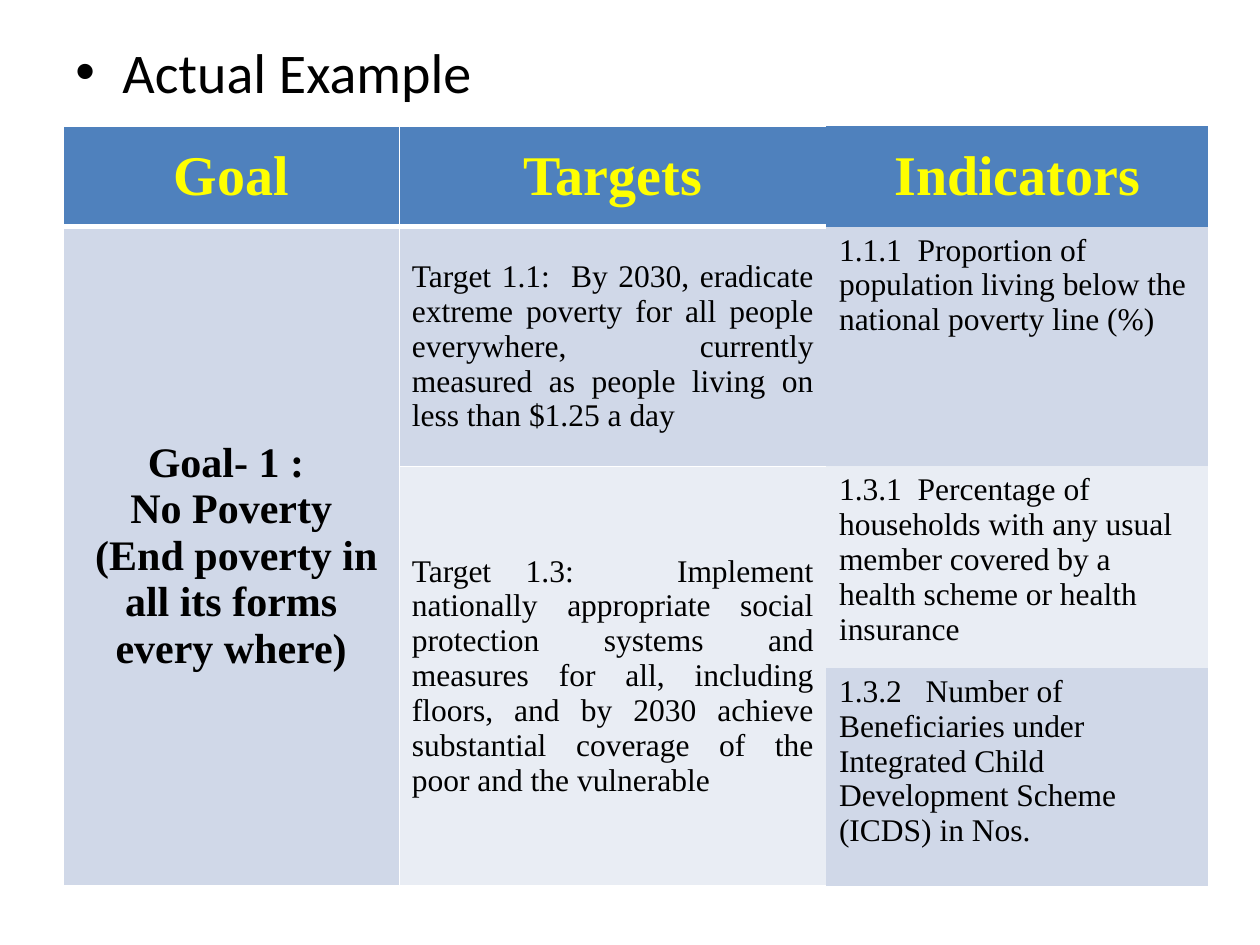
from dataclasses import dataclass

from lxml.etree import SubElement
from pptx import Presentation
from pptx.dml.color import RGBColor as Rgb
from pptx.enum.text import MSO_ANCHOR as Anchor, PP_ALIGN as Align
from pptx.oxml.ns import qn
from pptx.util import Cm, Pt


@dataclass(frozen=True)
class Theme:
    heading_font: str = "Calibri"
    table_font: str = "Times New Roman"
    large: int = 32
    medium: int = 24
    small: int = 18
    black: str = "000000"
    yellow: str = "FFFF00"
    white: str = "FFFFFF"
    header: str = "4F81BD"
    band: str = "D0D8E8"
    light_band: str = "E9EDF4"


THEME = Theme()
HEADING = "Actual Example"
COLUMN_WIDTHS = (6.78, 8.61, 7.7)
ROW_HEIGHTS = (2.03, 4.83, 3.99, 4.39)

STYLES = {
    "header": (THEME.large, True, THEME.yellow, Align.CENTER, Anchor.MIDDLE),
    "goal": (THEME.medium, True, THEME.black, Align.CENTER, Anchor.MIDDLE),
    "target": (THEME.small, False, THEME.black, Align.JUSTIFY, Anchor.MIDDLE),
    "indicator": (THEME.small, False, THEME.black, Align.LEFT, Anchor.TOP),
}
COLUMN_BORDERS = ("LRTB", "LTB", "")

ENTRIES = [
    (0, 0, 1, "header", THEME.header, ["Goal"]),
    (0, 1, 1, "header", THEME.header, ["Targets"]),
    (0, 2, 1, "header", THEME.header, ["Indicators"]),
    (1, 0, 3, "goal", THEME.band, [
        "Goal- 1 : ", "No Poverty", " (End poverty in all its forms every where)"]),
    (1, 1, 1, "target", THEME.band, [
        "Target 1.1:  By 2030, eradicate extreme poverty for all people everywhere, "
        "currently measured as people living on less than $1.25 a day "]),
    (1, 2, 1, "indicator", THEME.band, [
        "1.1.1  Proportion of population living below the national poverty line (%)"]),
    (2, 1, 2, "target", THEME.light_band, [
        "Target 1.3:   Implement nationally appropriate social protection systems and "
        "measures for all, including floors, and by 2030 achieve substantial coverage "
        "of the poor and the vulnerable "]),
    (2, 2, 1, "indicator", THEME.light_band, [
        "1.3.1  Percentage of households with any usual member covered by a health "
        "scheme or health insurance"]),
    (3, 2, 1, "indicator", THEME.band, [
        "1.3.2   Number of Beneficiaries under Integrated Child Development Scheme "
        "(ICDS) in Nos."]),
]


def add_run(paragraph, text, font, size, bold, color):
    run = paragraph.add_run()
    run.text = text
    run.font.name, run.font.size, run.font.bold = font, Pt(size), bold
    run.font.color.rgb = Rgb.from_string(color)


def add_heading(slide):
    frame = slide.shapes.add_textbox(Cm(1.27), Cm(0.64), Cm(22.86), Cm(1.9)).text_frame
    frame.word_wrap = True
    heading = frame.paragraphs[0]
    heading.space_before = Pt(6.4)
    add_run(heading, HEADING, THEME.heading_font, THEME.large, False, THEME.black)
    properties = heading._p.get_or_add_pPr()
    properties.set("marL", str(Cm(0.95)))
    properties.set("indent", str(-Cm(0.95)))
    SubElement(properties, qn("a:buFont"), typeface="Arial")
    SubElement(properties, qn("a:buChar"), char="•")


def set_borders(cell, visible, bottom_width):
    properties = cell._tc.get_or_add_tcPr()
    for side in "LRTB":
        width = bottom_width if side == "B" else 1
        border = SubElement(properties, qn(f"a:ln{side}"), w=str(Pt(width)))
        if side in visible:
            paint = SubElement(border, qn("a:solidFill"))
            SubElement(paint, qn("a:srgbClr"), val=THEME.white)
        else:
            SubElement(border, qn("a:noFill"))


def fill_entry(table, row, column, span, style, background, texts):
    size, bold, color, align, anchor = STYLES[style]
    for covered in range(row, row + span):
        part = table.cell(covered, column)
        set_borders(part, COLUMN_BORDERS[column], 3 if style == "header" else 1)
        part.fill.solid()
        part.fill.fore_color.rgb = Rgb.from_string(background)
    cell = table.cell(row, column)
    if span > 1:
        cell.merge(table.cell(row + span - 1, column))
    cell.vertical_anchor = anchor
    for index, text in enumerate(texts):
        frame = cell.text_frame
        paragraph = frame.add_paragraph() if index else frame.paragraphs[0]
        paragraph.alignment = align
        add_run(paragraph, text, THEME.table_font, size, bold, color)


def add_goal_table(slide):
    table = slide.shapes.add_table(
        len(ROW_HEIGHTS), len(COLUMN_WIDTHS), Cm(1.27), Cm(2.54),
        Cm(sum(COLUMN_WIDTHS)), Cm(sum(ROW_HEIGHTS))).table
    table.horz_banding = False
    for column, width in zip(table.columns, COLUMN_WIDTHS):
        column.width = Cm(width)
    for row, height in zip(table.rows, ROW_HEIGHTS):
        row.height = Cm(height)
    for entry in ENTRIES:
        fill_entry(table, *entry)


def main():
    """Build the slide showing a goal with its targets and indicators."""
    deck = Presentation()
    deck.slide_width, deck.slide_height = Cm(25.4), Cm(19.05)
    slide = deck.slides.add_slide(deck.slide_layouts[6])
    add_heading(slide)
    add_goal_table(slide)
    deck.save("out.pptx")


if __name__ == "__main__":
    main()
